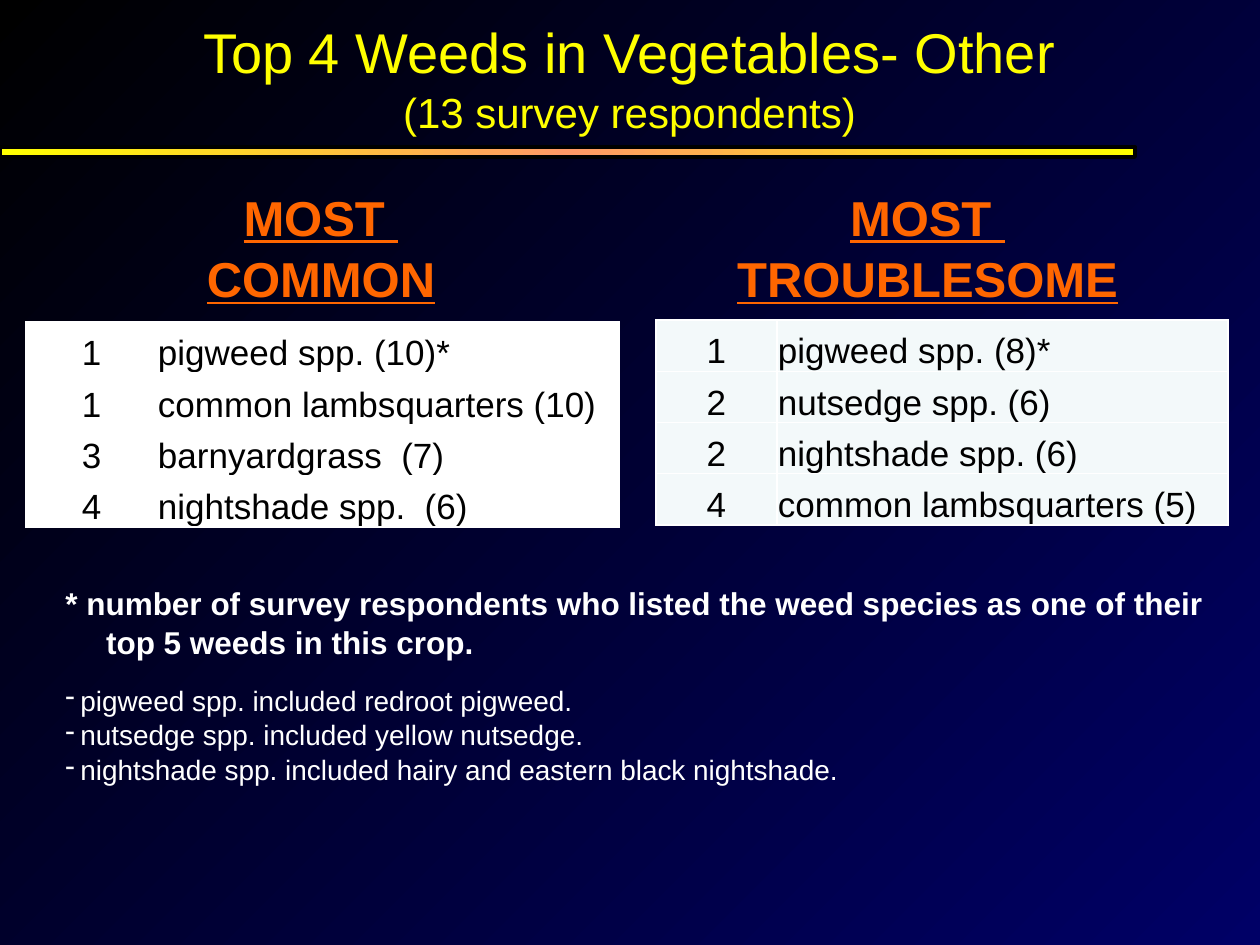
import copy

import pptx
import pptx.dml.color
import pptx.enum.shapes
import pptx.enum.text
import pptx.oxml
import pptx.oxml.ns
import pptx.util

RGB = pptx.dml.color.RGBColor
ALIGN = pptx.enum.text.PP_ALIGN
ANCHOR = pptx.enum.text.MSO_ANCHOR
AUTO_SIZE = pptx.enum.text.MSO_AUTO_SIZE

BLACK = RGB(0x00, 0x00, 0x00)
WHITE = RGB(0xFF, 0xFF, 0xFF)
NAVY = RGB(0x00, 0x00, 0x66)
YELLOW = RGB(0xFF, 0xFF, 0x00)
PEACH = RGB(0xFF, 0x99, 0x66)
ORANGE = RGB(0xFF, 0x66, 0x00)
PALE = RGB(0xF3, 0xF9, 0xFA)

FONT = "Arial"
LINE_SPACING = 1.04

COMMON = [
    ("1", "pigweed spp. (10)*"),
    ("1", "common lambsquarters (10)"),
    ("3", "barnyardgrass  (7)"),
    ("4", "nightshade spp.  (6)"),
]
TROUBLESOME = [
    ("1", "pigweed spp. (8)*"),
    ("2", "nutsedge spp. (6)"),
    ("2", "nightshade spp. (6)"),
    ("4", "common lambsquarters (5)"),
]
FOOTNOTE = ("* number of survey respondents who listed the weed species "
            "as one of their  top 5 weeds in this crop.")
SPECIES_NOTES = [
    "pigweed spp. included redroot pigweed.",
    "nutsedge spp. included yellow nutsedge.",
    "nightshade spp. included hairy and eastern black nightshade.",
]


def px(length):
    return pptx.util.Emu(round(length * 914400 / 126))


def drawing_element(tag, content="", attributes=""):
    namespace = pptx.oxml.ns.nsdecls("a")
    return pptx.oxml.parse_xml(
        f"<a:{tag} {namespace} {attributes}>{content}</a:{tag}>")


def format_paragraph(para, size, color, align=ALIGN.LEFT, bold=False, underline=False):
    para.alignment = align
    para.line_spacing = LINE_SPACING
    for span in para.runs:
        font = span.font
        font.name = FONT
        font.size = pptx.util.Pt(size)
        font.color.rgb = color
        font.bold = bold
        font.underline = underline


def set_indent(para, indent, bullet=None):
    properties = para._p.get_or_add_pPr()
    properties.set("marL", str(px(indent)))
    properties.set("indent", str(-px(indent)))
    if bullet:
        properties.append(drawing_element("buChar", attributes=f'char="{bullet}"'))


def set_gradient(fill, colors, angle):
    """Spread the colors evenly along a linear gradient."""
    fill.gradient()
    fill.gradient_angle = angle
    stop_list = fill.gradient_stops[0]._gs.getparent()
    while len(stop_list) < len(colors):
        stop_list.append(copy.deepcopy(stop_list[-1]))
    for index, (stop, color) in enumerate(zip(fill.gradient_stops, colors)):
        stop.position = index / (len(colors) - 1)
        stop.color.rgb = color


def set_title(slide, title, subtitle):
    box = slide.shapes.title
    box.left, box.top, box.width, box.height = px(42), px(0), px(1175), px(151)
    frame = box.text_frame
    frame.auto_size = AUTO_SIZE.NONE
    frame.vertical_anchor = ANCHOR.MIDDLE
    frame.text = f"{title}\n{subtitle}"
    for para, size in zip(frame.paragraphs, (32, 24)):
        format_paragraph(para, size, YELLOW, ALIGN.CENTER)


def add_rule(slide):
    bar = slide.shapes.add_shape(
        pptx.enum.shapes.MSO_SHAPE.RECTANGLE, px(0), px(147), px(1135), px(10))
    bar.shadow.inherit = False
    set_gradient(bar.fill, [YELLOW, PEACH, YELLOW], 0)
    bar.line.color.rgb = BLACK
    bar.line.width = pptx.util.Pt(2.25)


def add_heading(slide, left, width, text):
    box = slide.shapes.add_textbox(px(left), px(179), px(width), px(131))
    frame = box.text_frame
    frame.word_wrap = False
    frame.text = text
    for para in frame.paragraphs:
        format_paragraph(para, 28, ORANGE, ALIGN.CENTER, bold=True, underline=True)


def format_cell(cell, text, align, fill):
    cell.text = text
    format_paragraph(cell.text_frame.paragraphs[0], 20, BLACK, align)
    cell.vertical_anchor = ANCHOR.BOTTOM
    cell.margin_left = cell.margin_right = cell.margin_top = px(1)
    cell.margin_bottom = 0
    # Borders come before the fill in the cell properties
    properties = cell._tc.get_or_add_tcPr()
    for side in ("lnL", "lnR", "lnT", "lnB"):
        properties.append(drawing_element(
            side, f'<a:solidFill><a:srgbClr val="{WHITE}"/></a:solidFill>', 'w="12700"'))
    cell.fill.solid()
    cell.fill.fore_color.rgb = fill


def add_ranking(slide, left, top, widths, entries, fill):
    table = slide.shapes.add_table(
        len(entries), 2, px(left), px(top), px(sum(widths)), px(205)).table
    table.first_row = False
    table.horz_banding = False
    for column, width in zip(table.columns, widths):
        column.width = px(width)
    for row, (rank, weed) in enumerate(entries):
        format_cell(table.cell(row, 0), rank, ALIGN.CENTER, fill)
        format_cell(table.cell(row, 1), weed, ALIGN.LEFT, fill)


def add_notes_text(slide):
    box = slide.shapes.add_textbox(px(53), px(576), px(1166), px(212))
    frame = box.text_frame
    frame.word_wrap = True
    frame.text = "\n".join([FOOTNOTE] + SPECIES_NOTES)
    footnote, *species = frame.paragraphs
    format_paragraph(footnote, 18, WHITE, bold=True)
    set_indent(footnote, 32)
    footnote.space_after = pptx.util.Pt(12)
    for para in species:
        format_paragraph(para, 16, WHITE)
        set_indent(para, 15, "-")


def main():
    deck = pptx.Presentation()
    deck.slide_width, deck.slide_height = px(1260), px(945)
    slide = deck.slides.add_slide(deck.slide_layouts[5])
    set_gradient(slide.background.fill, [BLACK, NAVY], 315)

    # Title and rule
    set_title(slide, "Top 4 Weeds in Vegetables- Other", "(13 survey respondents)")
    add_rule(slide)

    # Two rankings side by side
    add_heading(slide, 170, 302, "MOST \nCOMMON")
    add_heading(slide, 722, 411, "MOST \nTROUBLESOME")
    add_ranking(slide, 26, 322, (131, 462), COMMON, WHITE)
    add_ranking(slide, 656, 320, (121, 451), TROUBLESOME, PALE)

    # Footnote and species list
    add_notes_text(slide)

    deck.save("out.pptx")


if __name__ == "__main__":
    main()
